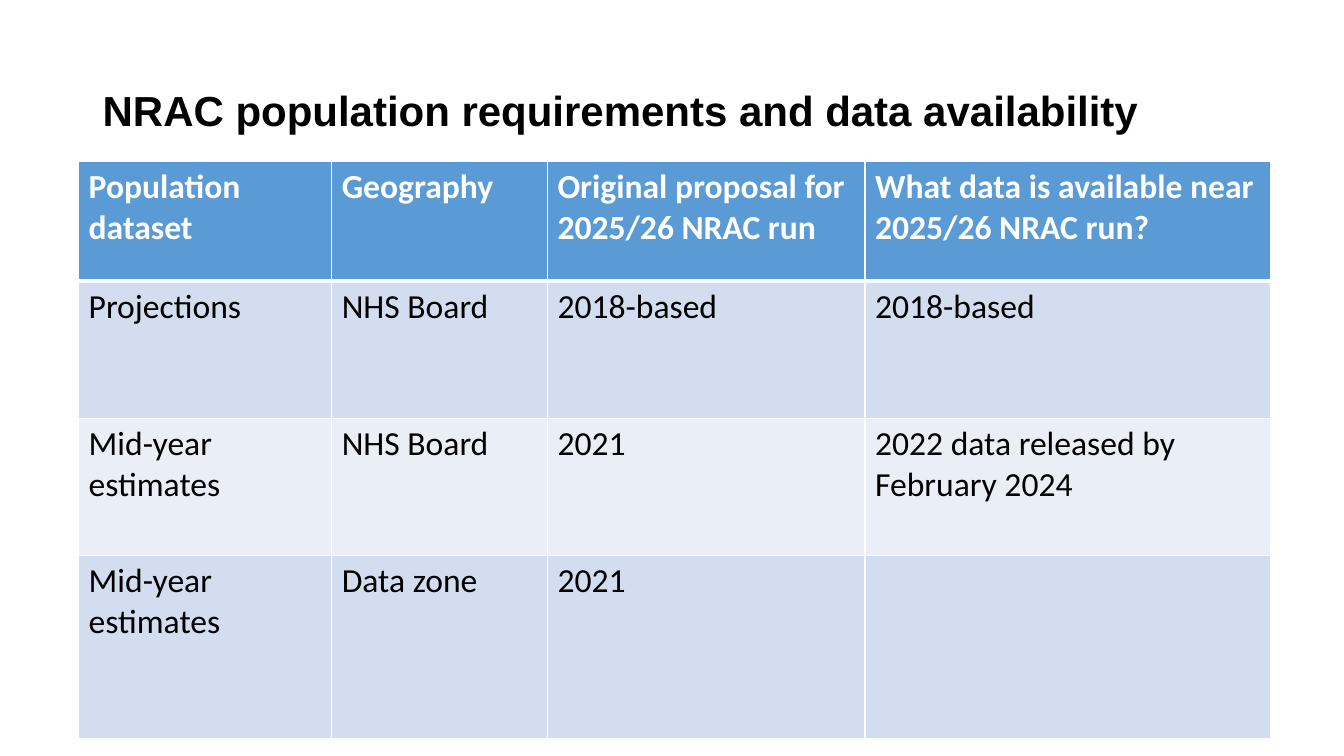
"""Build the slide on NRAC population requirements and data availability."""
import pptx
import pptx.dml.color
import pptx.enum.text
import pptx.oxml
import pptx.oxml.ns
import pptx.util

SLIDE_WIDTH, SLIDE_HEIGHT = 13.33, 7.5
COLOURS = {
    "text": "000000",
    "header_text": "FFFFFF",
    "header": "5B9BD5",
    "odd_row": "D2DEEF",
    "even_row": "EAEFF7",
    "rule": "FFFFFF",
}
COLUMN_WIDTHS = [2.51, 2.14, 3.15, 4.02]
ROW_HEIGHTS = [1.19, 1.36, 1.36, 1.82]
DATASETS = [
    ["Population dataset", "Geography", "Original proposal for 2025/26 NRAC run",
     "What data is available near 2025/26 NRAC run?"],
    ["Projections", "NHS Board", "2018-based", "2018-based"],
    ["Mid-year estimates", "NHS Board", "2021", "2022 data released by February 2024"],
    ["Mid-year estimates", "Data zone", "2021", ""],
]


def rgb(name):
    return pptx.dml.color.RGBColor.from_string(COLOURS[name])


def style_runs(paragraph, font_name, size, colour, bold):
    for run in paragraph.runs:
        run.font.name = font_name
        run.font.size = pptx.util.Pt(size)
        run.font.bold = bold
        run.font.color.rgb = rgb(colour)


def add_title(slide, wording, left, top, width, height):
    title = slide.shapes.add_textbox(*map(pptx.util.Inches, (left, top, width, height)))
    title.text_frame.word_wrap = True
    title.text_frame.vertical_anchor = pptx.enum.text.MSO_ANCHOR.MIDDLE
    title.text_frame.text = wording
    heading = title.text_frame.paragraphs[0]
    heading.line_spacing = 0.9
    style_runs(heading, "Arial", 30, "text", True)


def set_borders(cell, top, bottom):
    properties = cell._tc.get_or_add_tcPr()
    sides = {"lnL": 1, "lnR": 1, "lnT": top, "lnB": bottom}
    for position, (side, points) in enumerate(sides.items()):
        rule = pptx.oxml.parse_xml(
            f'<a:{side} {pptx.oxml.ns.nsdecls("a")} w="{pptx.util.Pt(points)}">'
            f'<a:solidFill><a:srgbClr val="{COLOURS["rule"]}"/></a:solidFill></a:{side}>')
        properties.insert(position, rule)


def fill_cell(cell, wording, row):
    is_header = row == 0
    band = "header" if is_header else ("odd_row" if row % 2 else "even_row")
    cell.fill.solid()
    cell.fill.fore_color.rgb = rgb(band)
    set_borders(cell, top=3 if row == 1 else 1, bottom=3 if is_header else 1)
    if wording:
        cell.text_frame.text = wording
        style_runs(cell.text_frame.paragraphs[0], "Calibri", 24,
                   "header_text" if is_header else "text", is_header)


def add_dataset_table(slide, left, top):
    bounds = left, top, sum(COLUMN_WIDTHS), sum(ROW_HEIGHTS)
    datasets = slide.shapes.add_table(
        len(ROW_HEIGHTS), len(COLUMN_WIDTHS), *map(pptx.util.Inches, bounds)).table
    for column, width in zip(datasets.columns, COLUMN_WIDTHS):
        column.width = pptx.util.Inches(width)
    for row, height in enumerate(ROW_HEIGHTS):
        datasets.rows[row].height = pptx.util.Inches(height)
        for column, wording in enumerate(DATASETS[row]):
            fill_cell(datasets.cell(row, column), wording, row)


def main():
    deck = pptx.Presentation()
    deck.slide_width = pptx.util.Inches(SLIDE_WIDTH)
    deck.slide_height = pptx.util.Inches(SLIDE_HEIGHT)
    slide = deck.slides.add_slide(deck.slide_layouts[6])
    add_title(slide, "NRAC population requirements and data availability",
              0.92, 0.4, 11.5, 1.45)
    add_dataset_table(slide, 0.78, 1.6)
    deck.save("out.pptx")


if __name__ == "__main__":
    main()
